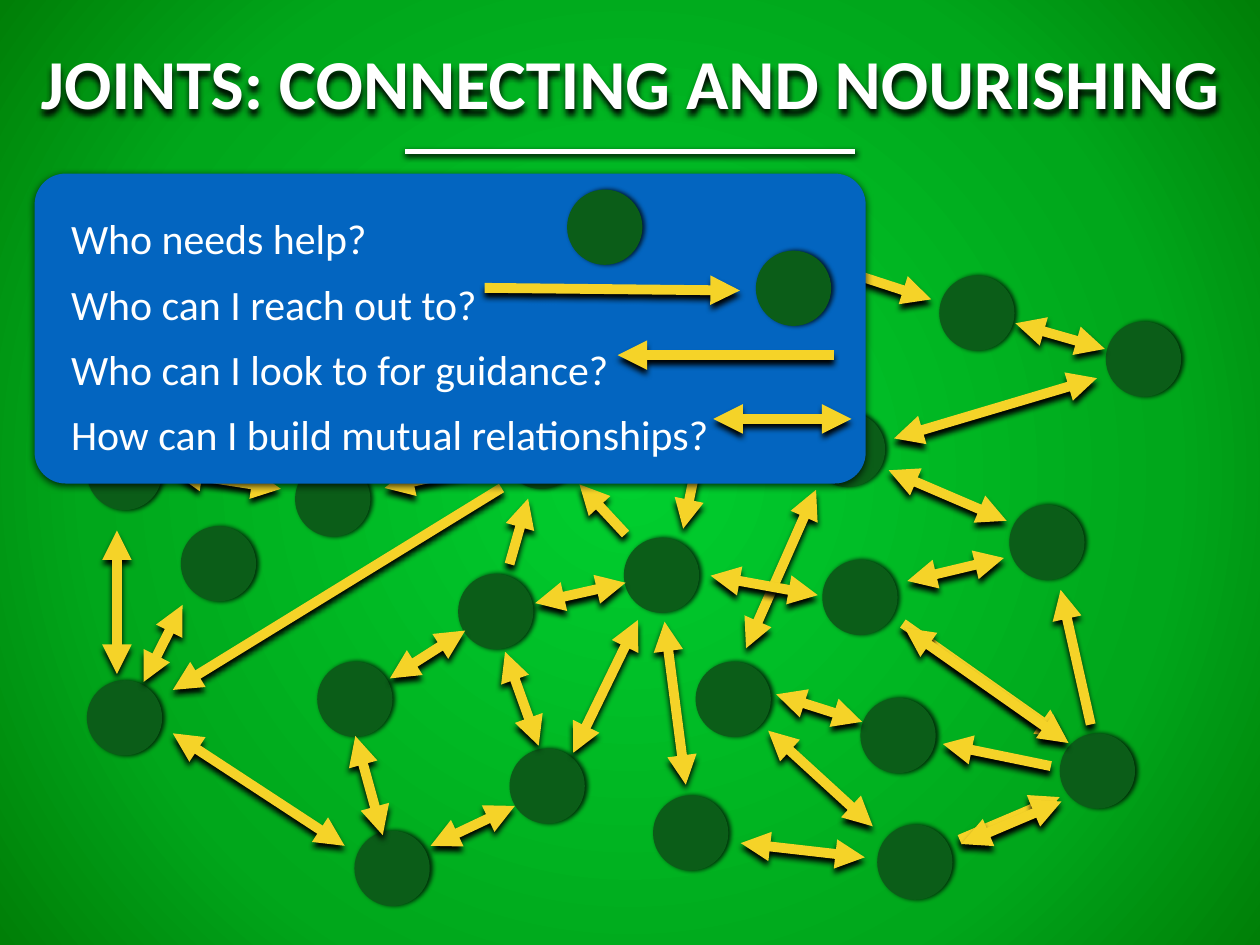
from pptx import Presentation
from pptx.dml.color import RGBColor
from pptx.enum.shapes import MSO_CONNECTOR as Line, MSO_SHAPE as Shape
from pptx.enum.text import MSO_ANCHOR as Anchor, PP_ALIGN as Align
from pptx.oxml import parse_xml
from pptx.oxml.ns import nsdecls, qn
from pptx.util import Inches, Pt

FONT = "Calibri"
WHITE, YELLOW, DARK_GREEN, BLUE = "FFFFFF", "F5D328", "0B5D18", "0365C0"
BACKDROP = [(0, "00CF2F"), (69, "00A71B"), (100, "007F07")]
DIAMETER = 0.85

# Top left corner of each person
PEOPLE = [
    (0.98, 4.91), (2.04, 5.94), (0.98, 7.68), (3.58, 7.47), (4, 9.38),
    (5.75, 8.45), (7.85, 7.47), (7.37, 8.98), (9.9, 9.31), (9.71, 7.88),
    (11.96, 8.28), (11.39, 5.7), (12.48, 3.63), (10.6, 3.11), (3.33, 5.21),
    (5.17, 6.48), (7.04, 6.07), (5.68, 4.67), (9.14, 4.65), (9.28, 6.32),
]

# Start and end of each link
ONE_WAY = [
    (5.51, 5.25, 4.34, 5.51), (5.75, 6.37, 5.96, 5.63),
    (10.19, 7.04, 12.03, 8.34), (5.66, 5.51, 1.95, 7.79),
    (7.06, 6.03, 6.54, 5.47), (10.83, 9.48, 11.96, 9),
    (12.31, 8.18, 11.97, 6.66), (11.86, 8.65, 10.64, 8.4),
]
MUTUAL = [
    (10.03, 5.31, 11.36, 5.88), (9.21, 5.53, 8.42, 7.32),
    (1.32, 5.99, 1.32, 7.61), (2.06, 6.83, 1.62, 7.7),
    (3.89, 9.55, 1.95, 8.28), (5.25, 7.12, 4.4, 7.66),
    (5.7, 7.36, 6.08, 8.42), (7.2, 7, 6.47, 8.5),
    (8.36, 9.52, 9.76, 9.68), (7.5, 7.02, 7.74, 8.86),
    (10.24, 6.56, 11.33, 6.3), (11.46, 3.65, 12.47, 3.94),
    (10.09, 4.95, 12.38, 4.27), (3.17, 5.52, 1.95, 5.33),
    (7.92, 4.96, 7.71, 5.97), (10.51, 3.38, 8.82, 2.83),
    (9.23, 6.72, 8.02, 6.5), (8.67, 8.25, 9.85, 9.33),
    (8.76, 7.84, 9.73, 8.15), (4.01, 8.31, 4.32, 9.43),
    (7.06, 6.58, 6.04, 6.81), (5.81, 9.1, 4.86, 9.55),
    (10.21, 7.09, 12.06, 8.39), (10.85, 9.53, 11.98, 9.05),
]

QUESTIONS = [
    "Who needs help?",
    "Who can I reach out to?",
    "Who can I look to for guidance?",
    "How can I build mutual relationships?",
]


def rgb(value):
    return RGBColor.from_string(value)


def cast_shadow(part, opacity, blur, distance, angle):
    part.element.spPr.append(parse_xml(
        f'<a:effectLst {nsdecls("a")}><a:outerShdw blurRad="{Pt(blur)}" '
        f'dist="{Pt(distance)}" dir="{angle * 60000}" rotWithShape="0">'
        f'<a:srgbClr val="000000"><a:alpha val="{opacity * 1000}"/></a:srgbClr>'
        '</a:outerShdw></a:effectLst>'))


def paint_backdrop(slide):
    stops = "".join(
        f'<a:gs pos="{position * 1000}"><a:srgbClr val="{color}"/></a:gs>'
        for position, color in BACKDROP)
    slide.element.cSld.insert(0, parse_xml(
        f'<p:bg {nsdecls("p", "a")}><p:bgPr><a:gradFill><a:gsLst>{stops}</a:gsLst>'
        '<a:path path="circle"><a:fillToRect l="50000" t="50000" r="50000" b="50000"/>'
        '</a:path></a:gradFill><a:effectLst/></p:bgPr></p:bg>'))


def add_filled(slide, preset, left, top, width, height, color):
    filled = slide.shapes.add_shape(
        preset, Inches(left), Inches(top), Inches(width), Inches(height))
    filled.fill.solid()
    filled.fill.fore_color.rgb = rgb(color)
    filled.line.fill.background()
    return filled


def add_person(slide, left, top):
    person = add_filled(slide, Shape.OVAL, left, top, DIAMETER, DIAMETER, DARK_GREEN)
    cast_shadow(person, 75, 4, 2, 0)


def add_line(slide, x1, y1, x2, y2, color, weight, drop, ends=()):
    """Draw a shadowed line with arrowheads at the given ends (headEnd, tailEnd)."""
    line = slide.shapes.add_connector(
        Line.STRAIGHT, Inches(x1), Inches(y1), Inches(x2), Inches(y2))
    line.line.color.rgb = rgb(color)
    line.line.width = Pt(weight)
    outline = line.element.spPr.find(qn("a:ln"))
    for end in ends:
        outline.append(parse_xml(f'<a:{end} {nsdecls("a")} type="triangle"/>'))
    cast_shadow(line, 100, 5, drop, 90)


def add_links(slide, left, top, links, mutual):
    ends = ("headEnd", "tailEnd") if mutual else ("tailEnd",)
    for x1, y1, x2, y2 in links:
        add_line(slide, left + x1, top + y1, left + x2, top + y2, YELLOW, 8, 4, ends)


def set_insets(frame):
    frame.margin_left = frame.margin_right = Inches(0.06)
    frame.margin_top = frame.margin_bottom = Inches(0.06)
    frame.vertical_anchor = Anchor.MIDDLE


def style_text(paragraph, size, bold=False):
    font = paragraph.runs[0].font
    font.name, font.size, font.bold = FONT, Pt(size), bold
    font.color.rgb = rgb(WHITE)


def add_heading(slide, left, top, width, height):
    heading = slide.shapes.add_textbox(
        Inches(left), Inches(top), Inches(width), Inches(height))
    frame = heading.text_frame
    frame.word_wrap = False
    set_insets(frame)
    frame.text = "JOINTS: CONNECTING AND NOURISHING"
    frame.paragraphs[0].alignment = Align.CENTER
    style_text(frame.paragraphs[0], 57, bold=True)
    cast_shadow(heading, 100, 5, 4, 90)

    middle, rule_y, half_rule = left + width / 2, top + height + 0.26, 2.54
    add_line(slide, middle - half_rule, rule_y, middle + half_rule, rule_y, WHITE, 4, 2)


def add_network(slide, left, top):
    for x, y in PEOPLE:
        add_person(slide, left + x, top + y)
    add_links(slide, left, top, ONE_WAY, mutual=False)
    add_links(slide, left, top, MUTUAL, mutual=True)


def add_questions(slide, left, top, width, height):
    panel = add_filled(slide, Shape.ROUNDED_RECTANGLE, left, top, width, height, BLUE)
    panel.adjustments[0] = 0.1
    cast_shadow(panel, 75, 6, 2.3, 90)
    frame = panel.text_frame
    frame.word_wrap = True
    set_insets(frame)
    frame.text = "\n".join(QUESTIONS)
    for question in frame.paragraphs:
        question.alignment = Align.LEFT
        question.line_spacing = 1.3
        indent = question._p.get_or_add_pPr()
        indent.set("marL", str(Inches(0.25)))
        indent.set("indent", "0")
        style_text(question, 34)

    for x, y in [(8.14, 0.87), (6.01, 0.18)]:
        add_person(slide, left + x, top + y)
    add_links(slide, left, top,
              [(5.08, 1.29, 7.96, 1.32), (9.02, 2.05, 6.58, 2.05)], mutual=False)
    add_links(slide, left, top, [(7.66, 2.77, 9.22, 2.77)], mutual=True)


def main():
    deck = Presentation()
    deck.slide_width, deck.slide_height = Inches(14.22), Inches(10.67)
    slide = deck.slides.add_slide(deck.slide_layouts[6])
    paint_backdrop(slide)
    add_heading(slide, 0.4, 0.38, 13.43, 1.07)
    add_network(slide, 0, 0)
    add_questions(slide, 0.39, 1.96, 9.38, 3.5)
    deck.save("out.pptx")


if __name__ == "__main__":
    main()
